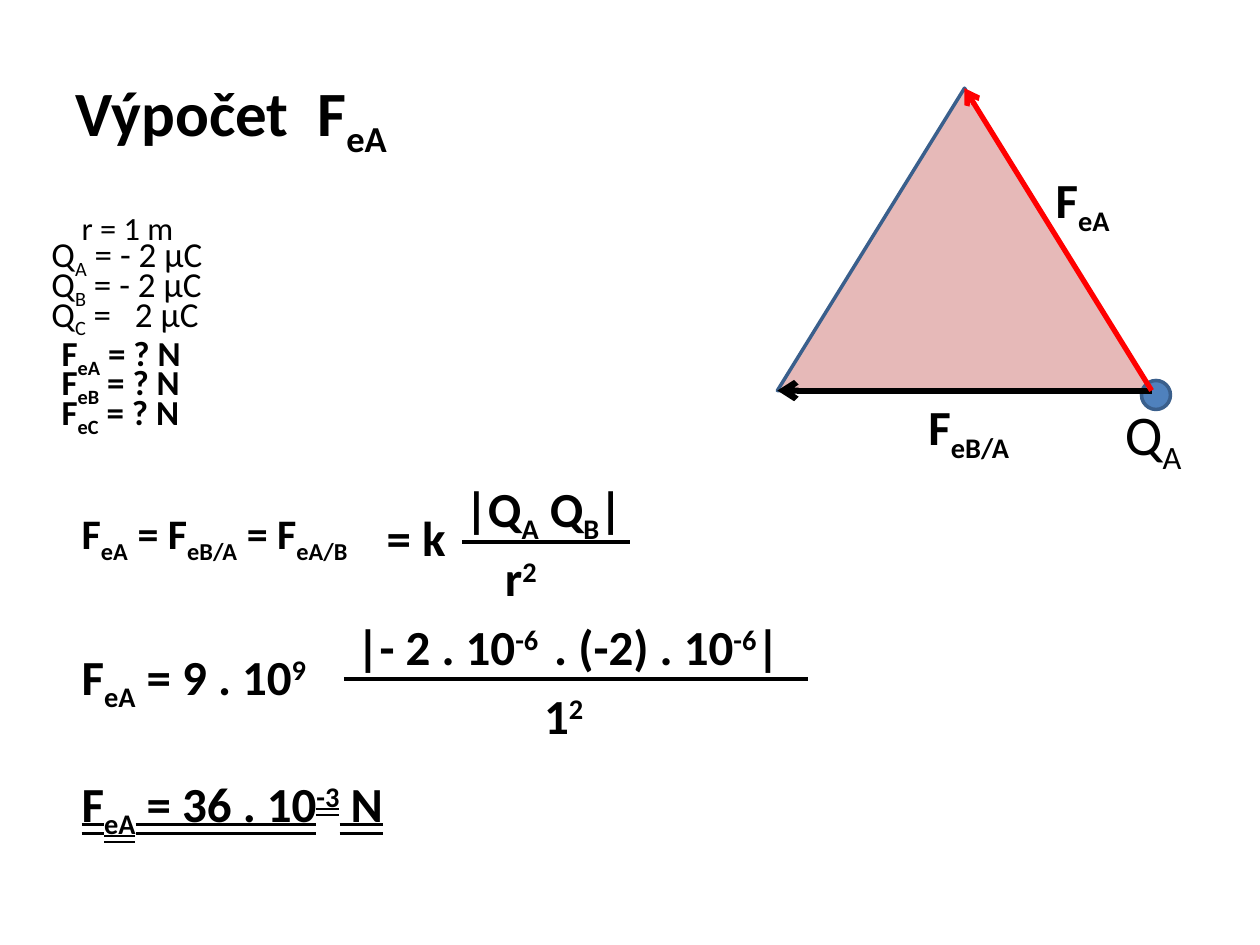
from lxml.etree import SubElement
from pptx import Presentation
from pptx.dml.color import RGBColor
from pptx.enum.shapes import MSO_CONNECTOR, MSO_SHAPE
from pptx.enum.text import MSO_ANCHOR, MSO_UNDERLINE, PP_ALIGN
from pptx.oxml.ns import qn
from pptx.util import Inches, Pt

BLACK, RED, OUTLINE = "000000", "FF0000", "3A5F8C"
PINK, BLUE = "E6B9B8", "4F81BD"


def sub(text):
    return text, -25000


def sup(text):
    return text, 30000


TITLE = ["Výpočet  F", sub("eA")]
DISTANCE = ["r = 1 m"]
CHARGES = [("A", " = - 2 µC"), ("B", " = - 2 µC"), ("C", " =   2 µC")]
UNKNOWN_FORCES = ["eA", "eB", "eC"]
RESULT = ["F", sub("eA"), " = 36 . 10", sup("-3"), " N"]

TRIANGLE = (6.17, 0.7, 2.97, 2.4)
CHARGE_DOT = (9.06, 3.02, 0.23, 0.23)
TRIANGLE_LABELS = [
    ((8.83, 3.12, 1.17, 0.74), ["Q", sub("A")], 32, False),
    ((8.28, 1.3, 0.7, 0.74), ["F", sub("eA")], 28, True),
    ((7.27, 3.1, 1.17, 0.74), ["F", sub("eB/A")], 28, True),
]

FORMULA_PARTS = [
    ((0.55, 3.98, 3.52, 0.5),
     ["F", sub("eA"), " = F", sub("eB/A"), " = F", sub("eA/B")], 24),
    ((2.97, 3.98, 1.33, 0.57), ["= k"], 28),
    ((3.59, 3.75, 1.95, 0.57), ["|Q", sub("A"), " Q", sub("B"), "|"], 28),
    ((3.91, 4.3, 1.33, 0.57), ["r", sup("2")], 28),
    ((0.55, 5.08, 3.75, 0.57), ["F", sub("eA"), " = 9 . 10", sup("9")], 28),
    ((2.73, 4.84, 3.52, 0.57), ["|- 2 . 10", sup("-6")], 28),
    ((4.22, 5.39, 1.33, 0.57), ["1", sup("2")], 28),
    ((4.3, 4.84, 3.28, 0.57), [". (-2) . 10", sup("-6"), "|"], 28),
]
FRACTION_BARS = [(3.67, 5, 4.3), (2.73, 6.41, 5.39)]


def color(fmt, hex_code):
    fmt.rgb = RGBColor.from_string(hex_code)


def write(frame, pieces, size, bold, underline=None):
    paragraph = frame.paragraphs[0]
    paragraph.alignment = PP_ALIGN.LEFT
    for piece in pieces:
        text, baseline = (piece, 0) if isinstance(piece, str) else piece
        run = paragraph.add_run()
        run.text = text
        run.font.name = "Calibri"
        run.font.size = Pt(size)
        run.font.bold = bold
        run.font.underline = underline
        color(run.font.color, BLACK)
        if baseline:
            run.font._element.set("baseline", str(baseline))
    return paragraph


def add_text(slide, box, pieces, size, bold, underline=None):
    frame = slide.shapes.add_textbox(*map(Inches, box)).text_frame
    frame.word_wrap = True
    return write(frame, pieces, size, bold, underline)


def add_figure(slide, preset, box, fill):
    figure = slide.shapes.add_shape(preset, *map(Inches, box))
    figure.shadow.inherit = False
    figure.fill.solid()
    color(figure.fill.fore_color, fill)
    color(figure.line.color, OUTLINE)
    figure.line.width = Pt(2)


def add_line(slide, start, end, hex_code, width, arrow=False):
    connector = slide.shapes.add_connector(
        MSO_CONNECTOR.STRAIGHT, *map(Inches, start + end))
    color(connector.line.color, hex_code)
    connector.line.width = Pt(width)
    if arrow:
        SubElement(connector.line._get_or_add_ln(), qn("a:tailEnd"), type="arrow")
    SubElement(connector._element.spPr, qn("a:effectLst"))


def add_triangle(slide):
    left, top, width, height = TRIANGLE
    add_figure(slide, MSO_SHAPE.ISOSCELES_TRIANGLE, TRIANGLE, PINK)
    add_figure(slide, MSO_SHAPE.OVAL, CHARGE_DOT, BLUE)
    charge = (left + width, top + height)
    add_line(slide, charge, (left, top + height), BLACK, 3.5, arrow=True)
    add_line(slide, charge, (left + width / 2, top), RED, 3, arrow=True)
    for box, pieces, size, bold in TRIANGLE_LABELS:
        add_text(slide, box, pieces, size, bold)


def add_given_values(slide):
    row_step = 0.235
    distance = add_text(slide, (0.55, 1.64, 2.7, 0.39), DISTANCE, 18.5, False)
    distance.line_spacing = 0.9
    for row, (charge, value) in enumerate(CHARGES):
        add_text(slide, (0.31, 1.8 + row * row_step, 2.7, 0.74),
                 ["Q", sub(charge), value], 20, False)
    for row, force in enumerate(UNKNOWN_FORCES):
        add_text(slide, (0.39, 2.58 + row * row_step, 3.05, 0.74),
                 ["F", sub(force), " = ? N"], 20, True)


def add_calculation(slide):
    for box, pieces, size in FORMULA_PARTS:
        add_text(slide, box, pieces, size, True)
    for left, right, y in FRACTION_BARS:
        add_line(slide, (left, y), (right, y), BLACK, 2)
    add_text(slide, (0.55, 6.09, 3.75, 0.57), RESULT, 28, True,
             MSO_UNDERLINE.DOUBLE_LINE)


def main():
    deck = Presentation()
    deck.slide_width, deck.slide_height = Inches(10), Inches(7.5)
    slide = deck.slides.add_slide(deck.slide_layouts[5])
    title = slide.shapes.title
    title.left, title.top = Inches(0.5), Inches(0.3)
    title.width, title.height = Inches(9), Inches(1.25)
    title.text_frame.vertical_anchor = MSO_ANCHOR.MIDDLE
    write(title.text_frame, TITLE, 36, True)
    add_triangle(slide)
    add_given_values(slide)
    add_calculation(slide)
    deck.save("out.pptx")


if __name__ == "__main__":
    main()
